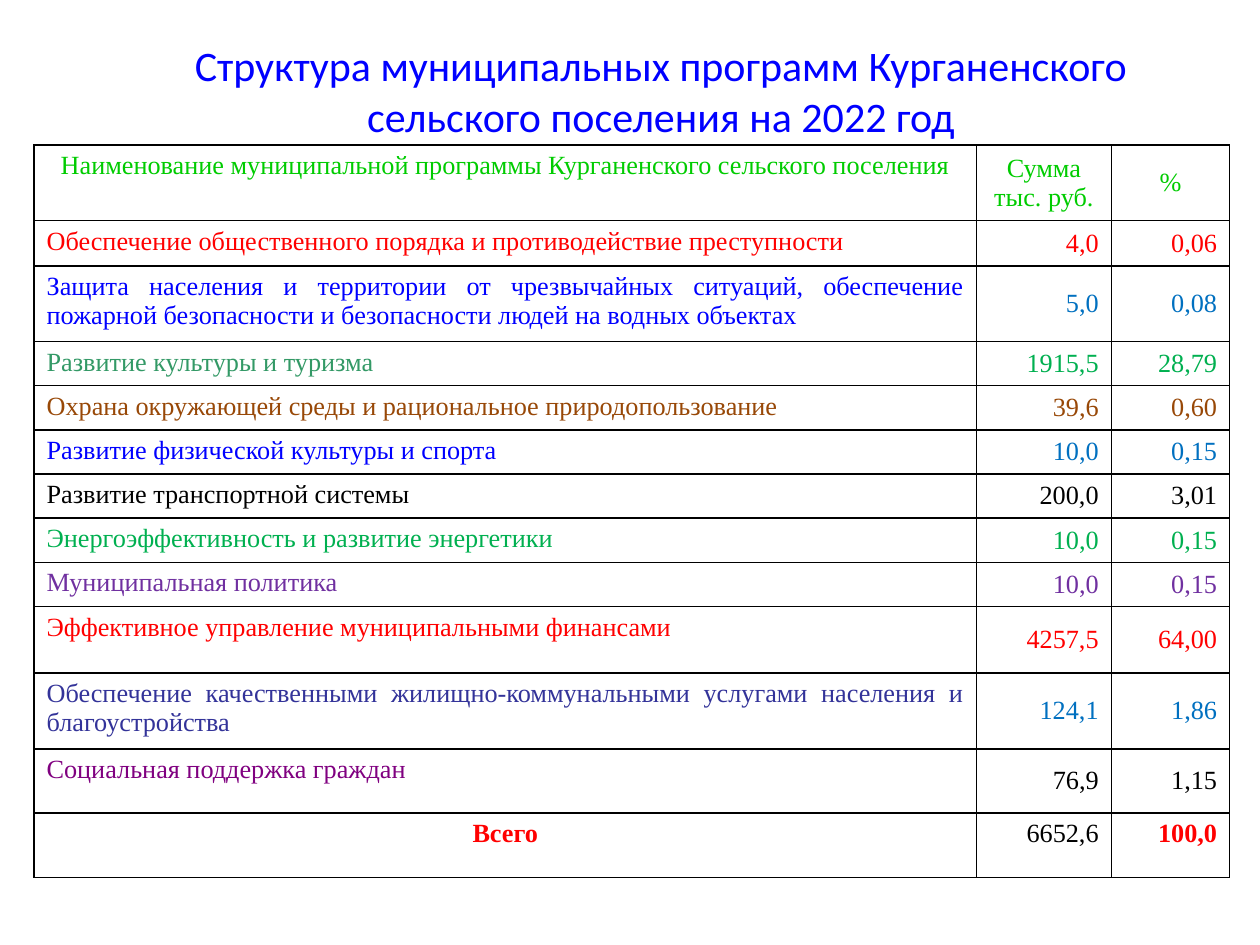
"""Build a slide with the table of municipal programmes and their budgets."""
from lxml.etree import SubElement
from pptx import Presentation
from pptx.dml.color import RGBColor
from pptx.enum.text import MSO_ANCHOR as Anchor, PP_ALIGN as Align
from pptx.oxml.ns import qn
from pptx.util import Inches, Pt

BLACK = RGBColor(0x00, 0x00, 0x00)
BLUE = RGBColor(0x00, 0x00, 0xFF)
SKY = RGBColor(0x00, 0x70, 0xC0)
LIME = RGBColor(0x00, 0xCC, 0x00)
GREEN = RGBColor(0x00, 0xB0, 0x50)
SEA = RGBColor(0x33, 0x99, 0x66)
RED = RGBColor(0xFF, 0x00, 0x00)
BROWN = RGBColor(0x98, 0x48, 0x07)
VIOLET = RGBColor(0x70, 0x30, 0xA0)
INDIGO = RGBColor(0x33, 0x33, 0x99)
PURPLE = RGBColor(0x80, 0x00, 0x80)

TITLE = "Структура муниципальных программ Курганенского сельского поселения на 2022 год"
HEADER = ("Наименование муниципальной программы Курганенского сельского поселения",
          "Сумма тыс. руб.", "%")
PROGRAMS = [
    ("Обеспечение общественного порядка и противодействие преступности",
     "4,0", "0,06", RED, RED, 0.36),
    ("Защита населения и территории от чрезвычайных ситуаций, обеспечение "
     "пожарной безопасности и безопасности людей на водных объектах",
     "5,0", "0,08", BLUE, SKY, 0.47),
    ("Развитие культуры и туризма", "1915,5", "28,79", SEA, GREEN, 0.26),
    ("Охрана окружающей среды и рациональное природопользование",
     "39,6", "0,60", BROWN, BROWN, 0.3),
    ("Развитие физической культуры и спорта", "10,0", "0,15", BLUE, SKY, 0.33),
    ("Развитие транспортной системы", "200,0", "3,01", BLACK, BLACK, 0.33),
    ("Энергоэффективность и развитие энергетики", "10,0", "0,15", GREEN, GREEN, 0.26),
    ("Муниципальная политика", "10,0", "0,15", VIOLET, VIOLET, 0.26),
    ("Эффективное управление муниципальными финансами",
     "4257,5", "64,00", RED, RED, 0.53),
    ("Обеспечение качественными жилищно-коммунальными услугами населения и "
     "благоустройства", "124,1", "1,86", INDIGO, SKY, 0.2),
    ("Социальная поддержка граждан", "76,9", "1,15", PURPLE, BLACK, 0.51),
]
TOTAL = ("Всего", "6652,6", "100,0")
COL_WIDTHS = (7.48, 1.07, 0.94)
HEADER_HEIGHT, TOTAL_HEIGHT = 0.41, 0.51


def write(tf, text, font, size, color, align, bold=False):
    p = tf.paragraphs[0]
    p.text = text
    p.alignment = align
    p.font.name, p.font.size, p.font.bold = font, Pt(size), bold
    p.font.color.rgb = color


def add_borders(cell):
    tc_pr = cell._tc.get_or_add_tcPr()
    for i, side in enumerate(("lnL", "lnR", "lnT", "lnB")):
        ln = tc_pr.makeelement(qn(f"a:{side}"), {"w": str(Pt(1))})
        fill = SubElement(ln, qn("a:solidFill"))
        SubElement(fill, qn("a:srgbClr"), val=str(BLACK))
        tc_pr.insert(i, ln)


def fill_row(table, row, texts, colors, aligns, anchors, bolds=(False,) * 3):
    for col, text in enumerate(texts):
        cell = table.cell(row, col)
        cell.fill.background()
        cell.vertical_anchor = anchors[col]
        write(cell.text_frame, text, "Times New Roman", 15, colors[col],
              aligns[col], bolds[col])
        add_borders(cell)


def main():
    prs = Presentation()
    prs.slide_width, prs.slide_height = Inches(10), Inches(7.5)
    s = prs.slides.add_slide(prs.slide_layouts[6])

    title = s.shapes.add_textbox(Inches(1), Inches(0.28), Inches(8.49), Inches(0.87))
    tf = title.text_frame
    tf.word_wrap = True
    tf.vertical_anchor = Anchor.MIDDLE
    write(tf, TITLE, "Calibri", 24, BLUE, Align.CENTER)

    heights = [HEADER_HEIGHT, *(program[-1] for program in PROGRAMS), TOTAL_HEIGHT]
    frame = s.shapes.add_table(len(heights), len(COL_WIDTHS), Inches(0.27), Inches(1.15),
                               Inches(sum(COL_WIDTHS)), Inches(sum(heights)))
    table = frame.table
    table.first_row = table.horz_banding = False
    for column, width in zip(table.columns, COL_WIDTHS):
        column.width = Inches(width)
    for row, height in zip(table.rows, heights):
        row.height = Inches(height)

    body_anchors = (Anchor.TOP, Anchor.MIDDLE, Anchor.MIDDLE)
    fill_row(table, 0, HEADER, (LIME,) * 3, (Align.CENTER,) * 3, body_anchors)
    for i, (name, amount, share, name_color, value_color, _) in enumerate(PROGRAMS, 1):
        fill_row(table, i, (name, amount, share), (name_color, value_color, value_color),
                 (Align.JUSTIFY, Align.RIGHT, Align.RIGHT), body_anchors)
    fill_row(table, len(heights) - 1, TOTAL, (RED, BLACK, RED),
             (Align.CENTER, Align.RIGHT, Align.RIGHT), (Anchor.TOP,) * 3,
             (True, False, True))

    prs.save("out.pptx")


if __name__ == "__main__":
    main()
